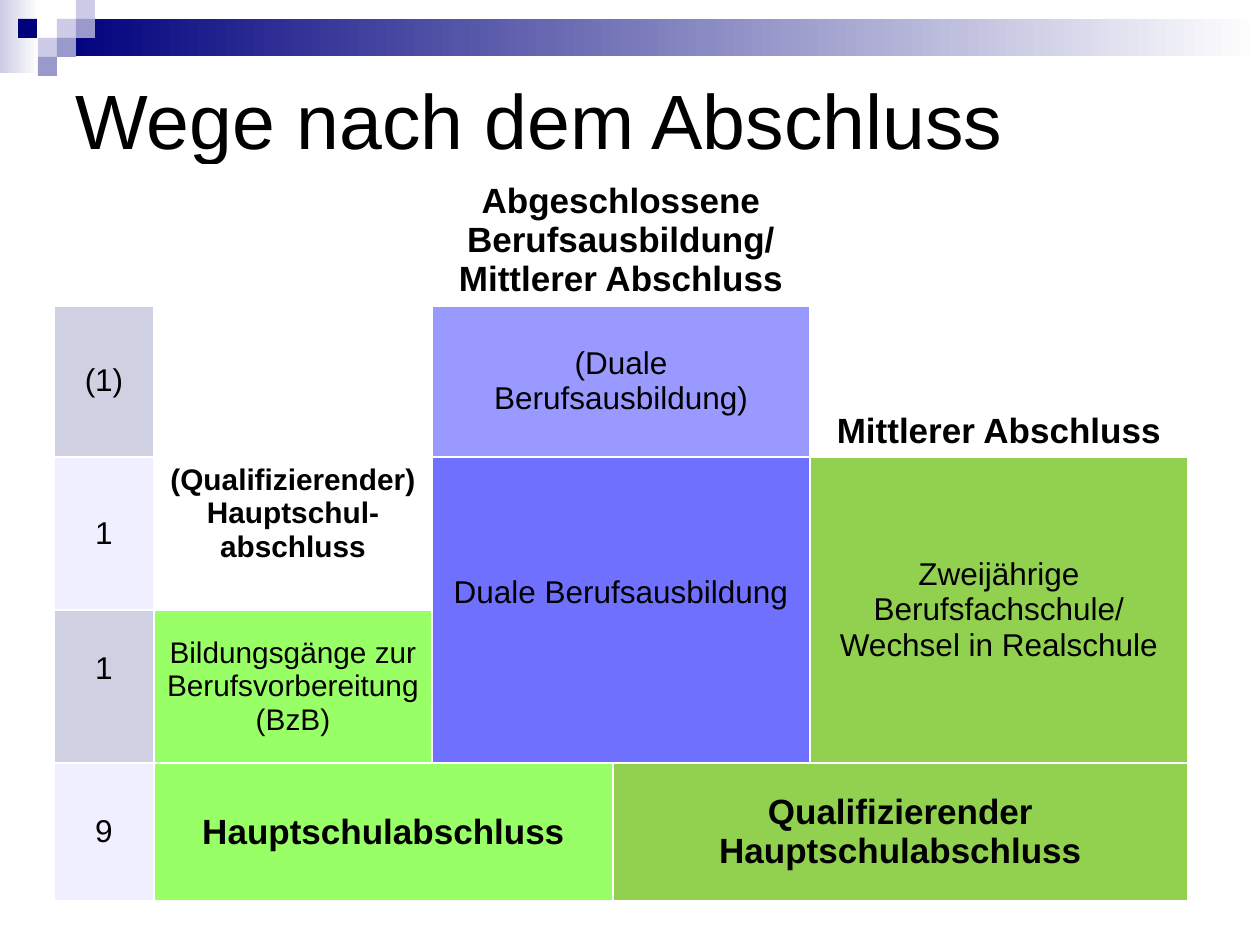
from lxml import etree
from pptx import Presentation
from pptx.dml.color import RGBColor
from pptx.enum.shapes import MSO_SHAPE
from pptx.enum.text import MSO_ANCHOR, PP_ALIGN
from pptx.oxml.ns import qn
from pptx.util import Pt

RECT = MSO_SHAPE.RECTANGLE
TOP, MIDDLE, BOTTOM = MSO_ANCHOR.TOP, MSO_ANCHOR.MIDDLE, MSO_ANCHOR.BOTTOM
CENTER, LEFT = PP_ALIGN.CENTER, PP_ALIGN.LEFT
PX = 914400 // 126
FONT = "Arial"
NAVY, LILAC, MAUVE, WHITE, BLACK = "00007D", "CCCCE6", "9999CC", "FFFFFF", "000000"
GREY, PALE, LIME, GREEN = "D0D0E3", "EFEFFF", "99FF66", "92D050"

# Content
TITLE = "Wege nach dem Abschluss"
TITLE_BOX = (63, 63, 1134, 112)
BANDS = [((0, 0, 39, 73), LILAC), ((57, 19, 1203, 37), NAVY)]
SQUARE = 19
SQUARES = [  # left, top, colour
    (57, 19, LILAC), (76, 0, LILAC), (76, 19, MAUVE), (38, 38, LILAC),
    (18, 19, NAVY), (57, 38, MAUVE), (38, 57, MAUVE),
]
TABLE_AT = (54, 165)
COLUMNS = [100, 278, 181, 197, 378]
ROWS = [140, 152, 153, 153, 138]
NORMAL = {"size": Pt(18), "bold": False}
SMALL = {"size": Pt(17), "bold": False}
SMALL_BOLD = {"size": Pt(17), "bold": True}
HEADING = {"size": Pt(20), "bold": True}
# Cell insets that differ from the default
USUAL = {}
RAISED = {"margin_bottom": 42}
WIDE = {"margin_left": 8, "margin_right": 8}
CELLS = [  # row, column, (row span, column span), text, font, fill, anchor, insets
    (0, 2, (1, 2), "Abgeschlossene Berufsausbildung/ Mittlerer Abschluss", HEADING, None, BOTTOM, USUAL),
    (1, 0, (1, 1), "(1)", NORMAL, GREY, MIDDLE, USUAL),
    (1, 2, (1, 2), "(Duale Berufsausbildung)", NORMAL, "9999FF", MIDDLE, USUAL),
    (1, 4, (1, 1), "Mittlerer Abschluss", HEADING, None, BOTTOM, USUAL),
    (2, 0, (1, 1), "1", NORMAL, PALE, MIDDLE, USUAL),
    (2, 1, (1, 1), "(Qualifizierender) Hauptschul-abschluss", SMALL_BOLD, None, TOP, USUAL),
    (2, 2, (2, 2), "Duale Berufsausbildung", NORMAL, "7070FF", MIDDLE, RAISED),
    (2, 4, (2, 1), "Zweijährige Berufsfachschule/\nWechsel in Realschule", NORMAL, GREEN, MIDDLE, USUAL),
    (3, 0, (1, 1), "1", NORMAL, GREY, MIDDLE, RAISED),
    (3, 1, (1, 1), "Bildungsgänge zur Berufsvorbereitung\n(BzB)", SMALL, LIME, MIDDLE, WIDE),
    (4, 0, (1, 1), "9", NORMAL, PALE, MIDDLE, USUAL),
    (4, 1, (1, 2), "Hauptschulabschluss", HEADING, LIME, MIDDLE, USUAL),
    (4, 3, (1, 2), "Qualifizierender Hauptschulabschluss", HEADING, GREEN, MIDDLE, USUAL),
]


def emu(*lengths):
    return [length * PX for length in lengths]


def rgb(color):
    return RGBColor.from_string(color)


def write(frame, text, font_format, align):
    frame.text = text
    for paragraph in frame.paragraphs:
        paragraph.alignment = align
        for run in paragraph.runs:
            for name, value in {"name": FONT, **font_format}.items():
                setattr(run.font, name, value)
            run.font.color.rgb = rgb(BLACK)


def add_rect(slide, box):
    rect = slide.shapes.add_shape(RECT, *emu(*box))
    rect.shadow.inherit = False
    rect.line.fill.background()
    return rect


def set_borders(cell, row):
    """White borders, heavier between the first two rows."""
    widths = {"L": 1, "R": 1, "T": 3 if row == 1 else 1, "B": 3 if row == 0 else 1}
    properties = cell._tc.get_or_add_tcPr()
    for index, (side, width) in enumerate(widths.items()):
        border = etree.Element(qn(f"a:ln{side}"), w=str(Pt(width)))
        fill = etree.SubElement(border, qn("a:solidFill"))
        etree.SubElement(fill, qn("a:srgbClr"), val=WHITE)
        properties.insert(index, border)


def add_decoration(slide):
    for box, color in BANDS:
        fill = add_rect(slide, box).fill
        fill.gradient()
        fill.gradient_angle = 0
        for stop, stop_color, position in zip(fill.gradient_stops, (color, WHITE), (0, 1)):
            stop.color.rgb = rgb(stop_color)
            stop.position = position
    for left, top, color in SQUARES:
        fill = add_rect(slide, (left, top, SQUARE, SQUARE)).fill
        fill.solid()
        fill.fore_color.rgb = rgb(color)


def add_title(slide):
    frame = slide.shapes.add_textbox(*emu(*TITLE_BOX)).text_frame
    frame.word_wrap = True
    frame.vertical_anchor = MIDDLE
    write(frame, TITLE, {"size": Pt(44)}, LEFT)


def add_pathways(slide):
    box = emu(*TABLE_AT, sum(COLUMNS), sum(ROWS))
    table = slide.shapes.add_table(len(ROWS), len(COLUMNS), *box).table
    table.first_row = table.horz_banding = False
    for column, width in zip(table.columns, emu(*COLUMNS)):
        column.width = width
    for row, height in zip(table.rows, emu(*ROWS)):
        row.height = height
    for row in range(len(ROWS)):
        for column in range(len(COLUMNS)):
            cell = table.cell(row, column)
            cell.fill.background()
            set_borders(cell, row)

    for row, column, (height, width), text, font_format, color, anchor, insets in CELLS:
        cell = table.cell(row, column)
        if (height, width) != (1, 1):
            cell.merge(table.cell(row + height - 1, column + width - 1))
        cell.vertical_anchor = anchor
        for name, inset in insets.items():
            setattr(cell, name, inset * PX)
        write(cell.text_frame, text, font_format, CENTER)
        if color:
            cell.fill.solid()
            cell.fill.fore_color.rgb = rgb(color)


def main():
    deck = Presentation()
    deck.slide_width, deck.slide_height = emu(1260, 945)
    slide = deck.slides.add_slide(deck.slide_layouts[6])
    add_decoration(slide)
    add_title(slide)
    add_pathways(slide)
    deck.save("out.pptx")


if __name__ == "__main__":
    main()
